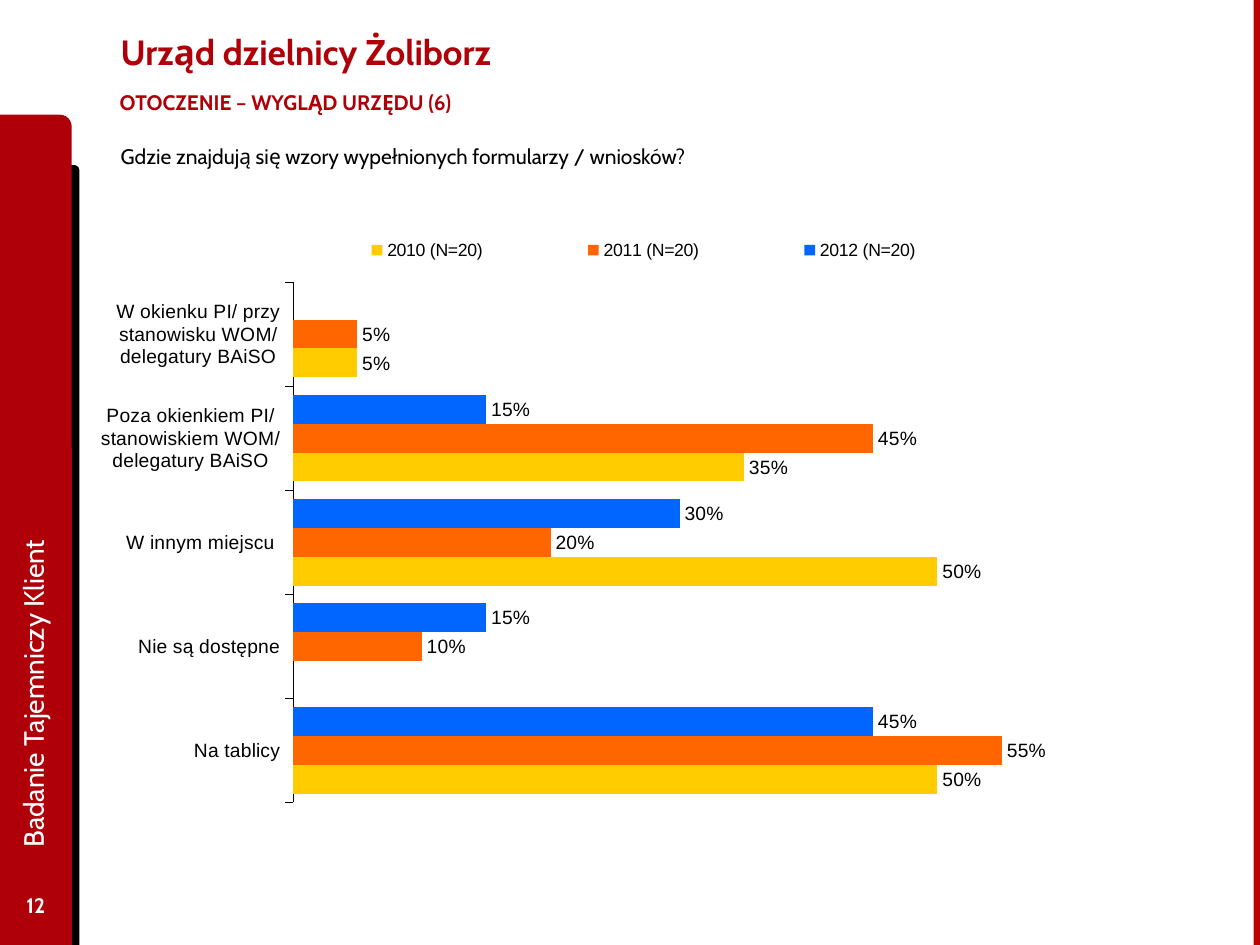
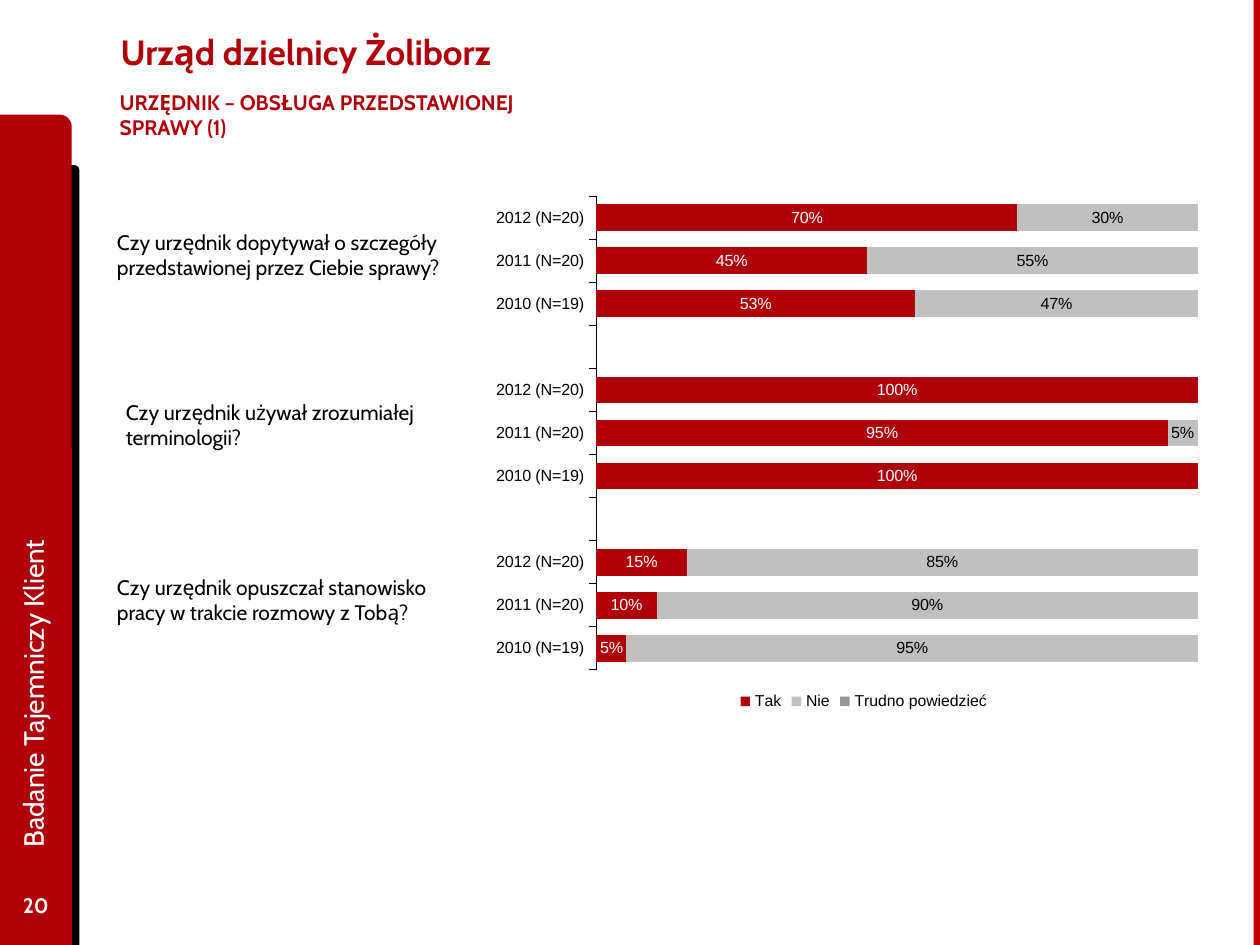
from pptx import Presentation
from pptx.chart.data import CategoryChartData
from pptx.dml.color import RGBColor
from pptx.enum.chart import XL_CHART_TYPE, XL_LABEL_POSITION, XL_LEGEND_POSITION, XL_TICK_MARK
from pptx.enum.shapes import MSO_SHAPE
from pptx.enum.text import MSO_ANCHOR, MSO_AUTO_SIZE, PP_ALIGN
from pptx.oxml import parse_xml
from pptx.oxml.ns import nsdecls, qn
from pptx.util import Inches, Pt

RED, EDGE_RED = "AF000A", "BD0000"
BLACK, WHITE = "000000", "FFFFFF"
SILVER, GREY = "C0C0C0", "969696"
BLUE, ORANGE, YELLOW = "0066FF", "FF6600", "FFCC00"
TEXT_FONT, CHART_FONT = "Cabin", "Arial"
PERCENT = "0%"


def rgb(value):
    return RGBColor.from_string(value)


def style_font(font, name, size, color, bold=False):
    font.name = name
    font.size = Pt(size)
    font.color.rgb = rgb(color)
    font.bold = bold


def manual_layout(x, y, width, height, inner=False):
    """Return a layout element; lengths are fractions of the chart area."""
    target = '<c:layoutTarget val="inner"/>' if inner else ""
    return parse_xml(
        f'<c:layout {nsdecls("c")}><c:manualLayout>{target}'
        '<c:xMode val="edge"/><c:yMode val="edge"/>'
        f'<c:x val="{x}"/><c:y val="{y}"/><c:w val="{width}"/><c:h val="{height}"/>'
        "</c:manualLayout></c:layout>")


class ReportDeck:
    """Holds the report style and the slide being filled."""

    def __init__(self):
        self.deck = Presentation()
        self.deck.slide_width = Inches(10)
        self.deck.slide_height = Inches(7.5)
        self.page = None

    def new_page(self, number, section):
        self.page = self.deck.slides.add_slide(self.deck.slide_layouts[6])
        self.panel(0.39, 1.31, 0.24, 6.19, BLACK, MSO_SHAPE.ROUND_1_RECTANGLE)
        self.panel(0, 0.91, 0.57, 6.59, RED, MSO_SHAPE.ROUND_1_RECTANGLE)
        self.panel(9.95, 0, 0.05, 7.5, EDGE_RED, MSO_SHAPE.RECTANGLE)
        self.text("Urząd dzielnicy Żoliborz", 0.86, 0.05, 7.77, 0.72,
                  size=20, color=RED, bold=True, anchor=MSO_ANCHOR.MIDDLE)
        heading = self.text(section, 0.75, 0.66, 3.85, 0.33, color=RED, bold=True)
        heading.text_frame.word_wrap = False
        heading.text_frame.margin_left = heading.text_frame.margin_right = Inches(0.2)
        page_number = self.text(str(number), 0, 6.98, 0.57, 0.4, color=WHITE,
                                bold=True, anchor=MSO_ANCHOR.MIDDLE)
        page_number.text_frame.paragraphs[0].alignment = PP_ALIGN.CENTER
        study_name = self.text("Badanie Tajemniczy Klient", -2.62, 3.69, 5.76, 0.51,
                               size=16, color=WHITE, anchor=MSO_ANCHOR.MIDDLE)
        study_name.rotation = 270

    def panel(self, left, top, width, height, color, kind):
        shape = self.page.shapes.add_shape(
            kind, Inches(left), Inches(top), Inches(width), Inches(height))
        shape.shadow.inherit = False
        shape.fill.solid()
        shape.fill.fore_color.rgb = rgb(color)
        shape.line.fill.background()

    def text(self, words, left, top, width, height, size=12, color=BLACK,
             bold=False, anchor=MSO_ANCHOR.TOP):
        box = self.page.shapes.add_textbox(
            Inches(left), Inches(top), Inches(width), Inches(height))
        box.text_frame.word_wrap = True
        box.text_frame.vertical_anchor = anchor
        span = box.text_frame.paragraphs[0].add_run()
        span.text = words
        style_font(span.font, TEXT_FONT, size, color, bold)
        return box

    def question(self, words, left, top, width, height):
        box = self.text(words, left, top, width, height)
        box.text_frame.auto_size = MSO_AUTO_SIZE.SHAPE_TO_FIT_TEXT

    def bar_chart(self, kind, area, categories, series, plot_layout, maximum,
                  size, legend_position, legend_size, label_position):
        """Add a bar chart; series rows are (name, fill, label colour, values)."""
        data = CategoryChartData(number_format=PERCENT)
        data.categories = categories
        for name, _, _, values in series:
            data.add_series(name, values)
        chart = self.page.shapes.add_chart(kind, *map(Inches, area), data).chart
        chart.has_title = False
        style_font(chart.font, CHART_FONT, size, BLACK)

        plot = chart.plots[0]
        plot.vary_by_categories = False
        plot.gap_width = 60
        plot.overlap = 100 if kind == XL_CHART_TYPE.BAR_STACKED else 0
        for bars, (_, fill, label_color, _) in zip(plot.series, series):
            bars.format.fill.solid()
            bars.format.fill.fore_color.rgb = rgb(fill)
            bars.invert_if_negative = False
            labels = bars.data_labels
            labels.show_value = True
            labels.position = label_position
            labels.number_format = PERCENT
            labels.number_format_is_linked = False
            style_font(labels.font, CHART_FONT, size, label_color)

        category_axis = chart.category_axis
        category_axis.reverse_order = True
        category_axis.has_major_gridlines = False
        category_axis.major_tick_mark = XL_TICK_MARK.OUTSIDE
        category_axis.format.line.color.rgb = rgb(BLACK)
        category_axis.format.line.width = Pt(0.23)
        style_font(category_axis.tick_labels.font, CHART_FONT, size, BLACK)
        value_axis = chart.value_axis
        value_axis.minimum_scale = 0
        value_axis.maximum_scale = maximum
        value_axis.has_major_gridlines = False
        value_axis.visible = False

        chart.has_legend = True
        chart.legend.position = legend_position
        chart.legend.include_in_layout = False
        style_font(chart.legend.font, CHART_FONT, legend_size, BLACK)

        plot_area = chart.element.find(".//" + qn("c:plotArea"))
        for layout in plot_area.findall(qn("c:layout")):
            plot_area.remove(layout)
        plot_area.insert(0, manual_layout(*plot_layout, inner=True))
        return chart

    def place_legend(self, chart, *fractions):
        legend = chart.element.find(".//" + qn("c:legend"))
        for layout in legend.findall(qn("c:layout")):
            legend.remove(layout)
        legend.find(qn("c:legendPos")).addnext(manual_layout(*fractions))


def add_form_samples_page(report):
    report.new_page(12, "OTOCZENIE – WYGLĄD URZĘDU (6)")
    report.question("Gdzie znajdują się wzory wypełnionych formularzy / wniosków?",
                    0.86, 1.09, 6.47, 0.3)
    places = ["W okienku PI/ przy stanowisku WOM/ delegatury BAiSO",
              "Poza okienkiem PI/ stanowiskiem WOM/ delegatury BAiSO",
              "W innym miejscu ", "Nie są dostępne", "Na tablicy"]
    years = [
        ("2012 (N=20)", BLUE, BLACK, [None, 0.15, 0.3, 0.15, 0.45]),
        ("2011 (N=20)", ORANGE, BLACK, [0.05, 0.45, 0.2, 0.1, 0.55]),
        ("2010 (N=20)", YELLOW, BLACK, [0.05, 0.35, 0.5, None, 0.5]),
    ]
    chart = report.bar_chart(
        XL_CHART_TYPE.BAR_CLUSTERED, (0.8, 1.85, 9.07, 4.52), places, years,
        plot_layout=(0.168, 0.089, 0.677, 0.914), maximum=0.6, size=11,
        legend_position=XL_LEGEND_POSITION.TOP, legend_size=10.1,
        label_position=XL_LABEL_POSITION.OUTSIDE_END)
    report.place_legend(chart, 0.15, 0.0, 0.65, 0.06)


def add_case_handling_page(report):
    report.new_page(20, "URZĘDNIK – OBSŁUGA PRZEDSTAWIONEJ SPRAWY (1)")
    questions = [
        ("Czy urzędnik dopytywał o szczegóły przedstawionej przez Ciebie sprawy?",
         0.83, 1.77, 3.23),
        ("Czy urzędnik używał zrozumiałej terminologii?", 0.9, 3.12, 3.23),
        ("Czy urzędnik opuszczał stanowisko pracy w trakcie rozmowy z Tobą?",
         0.83, 4.51, 2.93),
    ]
    for words, left, top, width in questions:
        report.question(words, left, top, width, 0.5)
    waves = ["2012 (N=20)", "2011 (N=20)", "2010 (N=19)"]
    rows = waves + [""] + waves + [""] + waves
    answers = [
        ("Tak", RED, WHITE,
         [0.7, 0.45, 0.53, None, 1, 0.95, 1, None, 0.15, 0.1, 0.05]),
        ("Nie", SILVER, BLACK,
         [0.3, 0.55, 0.47, None, None, 0.05, None, None, 0.85, 0.9, 0.95]),
        ("Trudno powiedzieć", GREY, BLACK, [None] * len(rows)),
    ]
    report.bar_chart(
        XL_CHART_TYPE.BAR_STACKED, (3.85, 1.55, 6.01, 4.13), rows, answers,
        plot_layout=(0.147, 0.002, 0.794, 0.91), maximum=1, size=9.2,
        legend_position=XL_LEGEND_POSITION.BOTTOM, legend_size=9,
        label_position=XL_LABEL_POSITION.CENTER)


def main():
    report = ReportDeck()
    add_form_samples_page(report)
    add_case_handling_page(report)
    report.deck.save("out.pptx")


if __name__ == "__main__":
    main()
